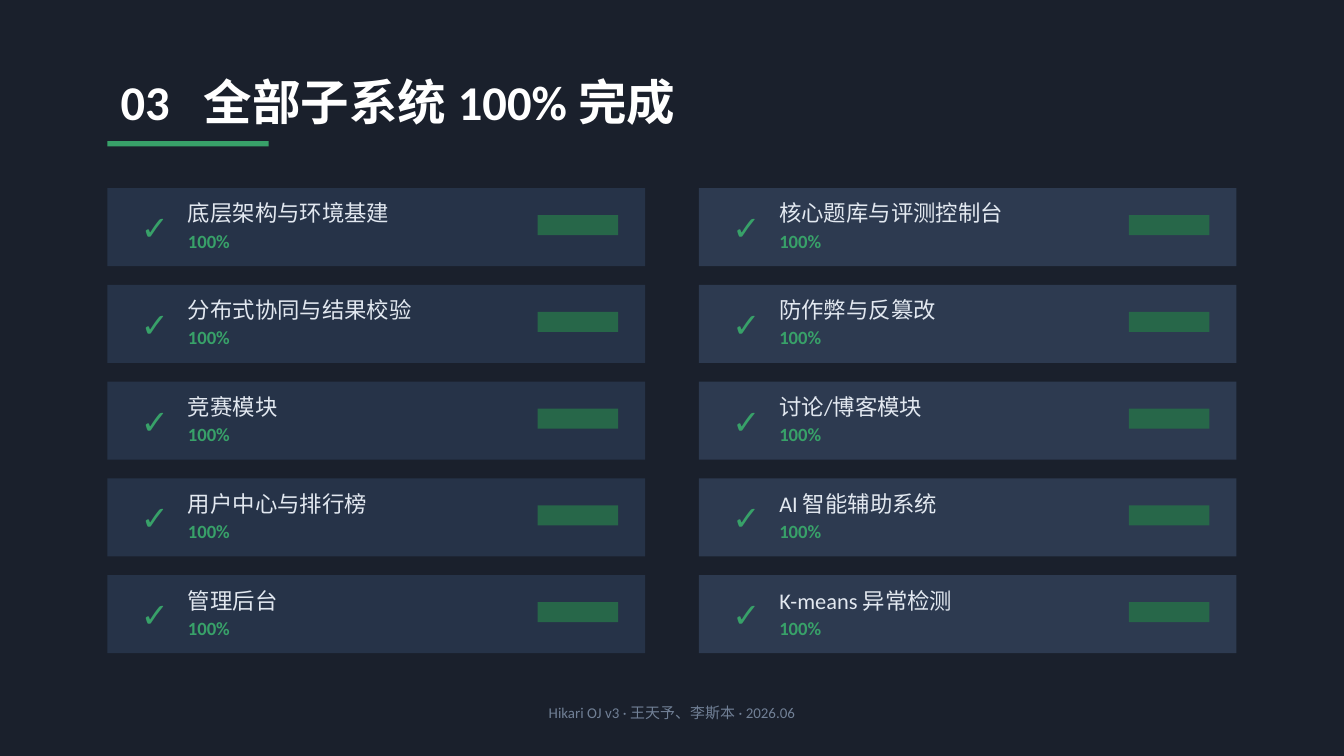
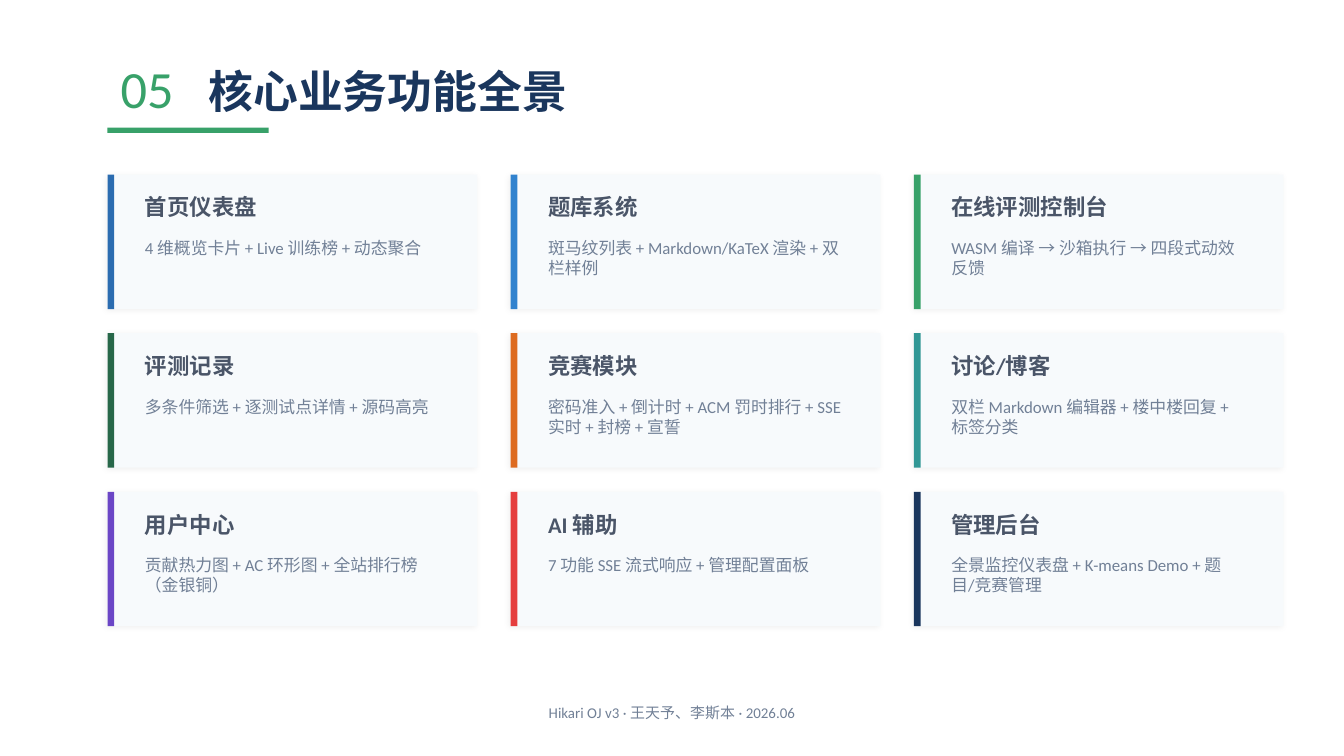
from dataclasses import dataclass

from lxml.etree import SubElement
from pptx import Presentation
from pptx.dml.color import RGBColor as Rgb
from pptx.enum.shapes import MSO_SHAPE as Shape
from pptx.enum.text import MSO_ANCHOR as Anchor, PP_ALIGN as Align
from pptx.oxml.ns import qn
from pptx.util import Pt


@dataclass(frozen=True)
class Box:
    left: float
    top: float
    width: float
    height: float

    def inner(self, left, top, width, height):
        return Box(self.left + left, self.top + top, width, height)

    def lengths(self):
        return [Pt(round(v, 2)) for v in (self.left, self.top, self.width, self.height)]


@dataclass(frozen=True)
class Style:
    size: float
    color: str
    bold: bool = False


class Theme:
    font = "Calibri"
    night, paper = "1A202C", "FFFFFF"
    green, dark_green, navy = "38A169", "276749", "1A365D"
    row_fills = ("263348", "2D3A50")
    card_fill, shadow = "F7FAFC", "000000"
    dark_title = Style(26, paper, True)
    number = Style(28, green)
    light_title = Style(24, navy, True)
    check = Style(18, green, True)
    row_name = Style(12, "E2E8F0")
    percent = Style(10, green, True)
    card_name = Style(12, "4A5568", True)
    detail = Style(9, "718096")
    footer = Style(8, "718096")


SLIDE = Box(0, 0, 720, 405)
MARGIN = 57.6
FOOTER = "Hikari OJ v3 · 王天予、李斯本 · 2026.06"

SUBSYSTEMS = [
    "底层架构与环境基建", "核心题库与评测控制台",
    "分布式协同与结果校验", "防作弊与反篡改",
    "竞赛模块", "讨论/博客模块",
    "用户中心与排行榜", "AI 智能辅助系统",
    "管理后台", "K-means 异常检测",
]

FEATURES = [
    ("首页仪表盘", "4 维概览卡片 + Live 训练榜 + 动态聚合", "2B6CB0"),
    ("题库系统", "斑马纹列表 + Markdown/KaTeX 渲染 + 双栏样例", "3182CE"),
    ("在线评测控制台", "WASM 编译 → 沙箱执行 → 四段式动效反馈", Theme.green),
    ("评测记录", "多条件筛选 + 逐测试点详情 + 源码高亮", Theme.dark_green),
    ("竞赛模块", "密码准入 + 倒计时 + ACM 罚时排行 + SSE 实时 + 封榜 + 宣誓", "DD6B20"),
    ("讨论/博客", "双栏 Markdown 编辑器 + 楼中楼回复 + 标签分类", "319795"),
    ("用户中心", "贡献热力图 + AC 环形图 + 全站排行榜（金银铜）", "6B46C6"),
    ("AI 辅助", "7 功能 SSE 流式响应 + 管理配置面板", "E53E3E"),
    ("管理后台", "全景监控仪表盘 + K-means Demo + 题目/竞赛管理", Theme.navy),
]


def apply_format(target, values):
    for name, value in values.items():
        setattr(target, name, value)


def add_block(page, box, color):
    block = page.shapes.add_shape(Shape.RECTANGLE, *box.lengths())
    block.shadow.inherit = False
    block.fill.solid()
    block.fill.fore_color.rgb = Rgb.from_string(color)
    block.line.fill.background()
    return block


def add_shadow(block):
    effects = block.element.spPr.find(qn("a:effectLst"))
    shadow = SubElement(effects, qn("a:outerShdw"), blurRad=str(Pt(3)), dist=str(Pt(1)),
                        dir=str(135 * 60000), algn="bl", rotWithShape="0")
    color = SubElement(shadow, qn("a:srgbClr"), val=Theme.shadow)
    SubElement(color, qn("a:alpha"), val="6000")


def add_text(page, box, *spans, anchor=Anchor.MIDDLE, align=Align.LEFT):
    frame = page.shapes.add_textbox(*box.lengths()).text_frame
    apply_format(frame, {"word_wrap": True, "vertical_anchor": anchor})
    para = frame.paragraphs[0]
    para.alignment = align
    for text, style in spans:
        span = para.add_run()
        span.text = text
        apply_format(span.font, {"name": Theme.font, "size": Pt(style.size), "bold": style.bold})
        span.font.color.rgb = Rgb.from_string(style.color)
    return para


def add_heading(page, box, tab, *spans):
    para = add_text(page, box, *spans)
    stops = SubElement(para._p.get_or_add_pPr(), qn("a:tabLst"))
    SubElement(stops, qn("a:tab"), pos=str(Pt(tab)), algn="l")
    add_block(page, box.inner(0, 46.8, 86.4, 2.88), Theme.green)


def add_page(deck, background):
    page = deck.slides.add_slide(deck.slide_layouts[6])
    page.background.fill.solid()
    page.background.fill.fore_color.rgb = Rgb.from_string(background)
    return page


def add_footer(page):
    add_text(page, SLIDE.inner(36, 370.8, 648, 21.6), (FOOTER, Theme.footer), align=Align.CENTER)


def grid(area, columns, step_x, step_y, items):
    for index, item in enumerate(items):
        row, column = divmod(index, columns)
        yield area.inner(column * step_x, row * step_y, area.width, area.height), column, item


def add_subsystem(page, box, fill, name):
    add_block(page, box, fill)
    add_text(page, box.inner(10.8, 4.32, 25.2, 33.12), ("✓", Theme.check))
    add_text(page, box.inner(36, 4.32, 187.2, 18), (name, Theme.row_name))
    add_text(page, box.inner(36, 20.16, 187.2, 15.84), ("100%", Theme.percent))
    add_block(page, box.inner(230.4, 14.4, 43.2, 10.8), Theme.dark_green)


def add_feature(page, box, name, detail, accent):
    add_shadow(add_block(page, box, Theme.card_fill))
    add_block(page, box.inner(0, 0, 3.6, box.height), accent)
    add_text(page, box.inner(12.96, 5.76, 172.8, 23.04), (name, Theme.card_name))
    add_text(page, box.inner(12.96, 30.24, 172.8, 34.56), (detail, Theme.detail), anchor=Anchor.TOP)


def build_progress_page(deck):
    page = add_page(deck, Theme.night)
    add_heading(page, Box(MARGIN, 28.8, 604.8, 50.4), 44.5,
                ("03\t全部子系统 100% 完成", Theme.dark_title))
    first = Box(MARGIN, 100.8, 288, 41.76)
    for box, column, name in grid(first, 2, 316.8, 51.84, SUBSYSTEMS):
        add_subsystem(page, box, Theme.row_fills[column], name)
    add_footer(page)


def build_features_page(deck):
    page = add_page(deck, Theme.paper)
    add_heading(page, Box(MARGIN, 21.6, 612, 50.4), 47,
                ("05\t", Theme.number), ("核心业务功能全景", Theme.light_title))
    first = Box(MARGIN, 93.6, 198, 72)
    for box, _, feature in grid(first, 3, 216, 84.96, FEATURES):
        add_feature(page, box, *feature)
    add_footer(page)


def main():
    deck = Presentation()
    apply_format(deck, {"slide_width": Pt(SLIDE.width), "slide_height": Pt(SLIDE.height)})
    build_progress_page(deck)
    build_features_page(deck)
    deck.save("out.pptx")


if __name__ == "__main__":
    main()
